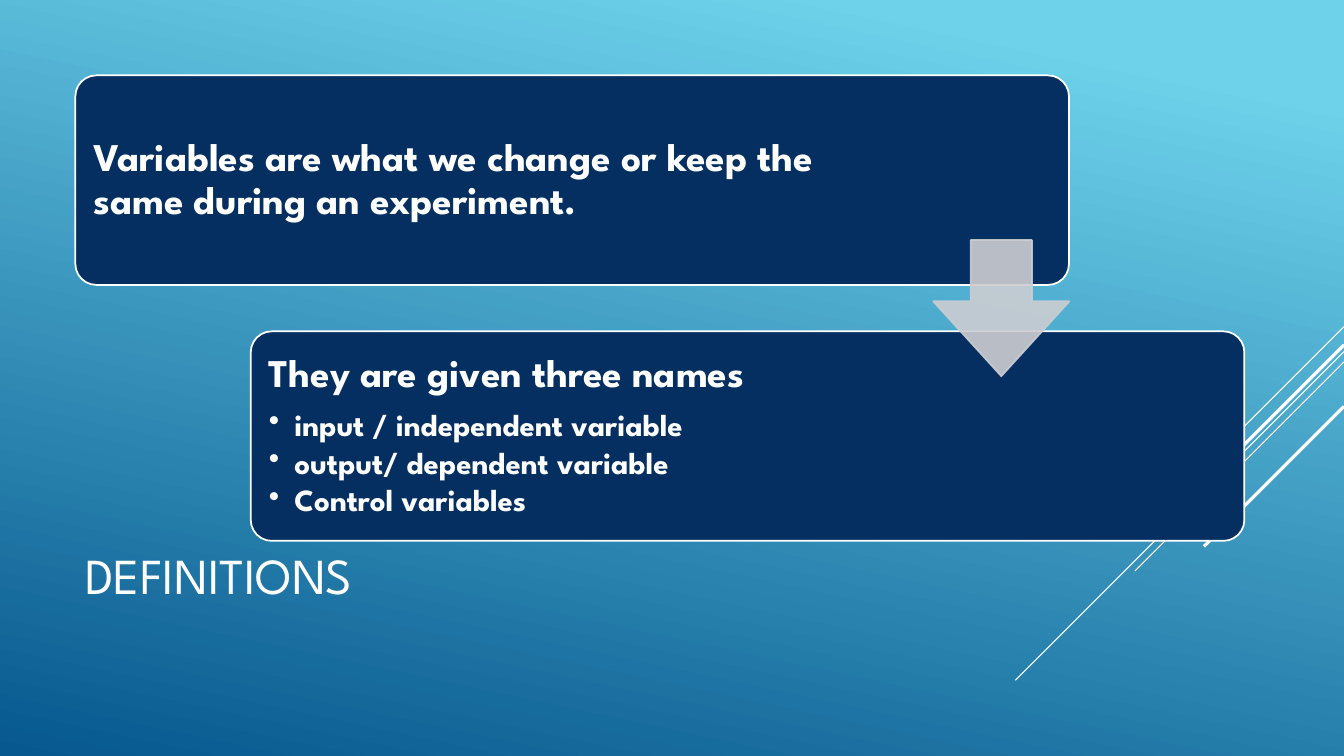
from dataclasses import dataclass

from pptx import Presentation
from pptx.dml.color import RGBColor
from pptx.enum.shapes import MSO_CONNECTOR, MSO_SHAPE
from pptx.enum.text import MSO_ANCHOR
from pptx.oxml.ns import qn
from pptx.util import Cm, Pt
from lxml import etree

STRAIGHT = MSO_CONNECTOR.STRAIGHT
ROUNDED = MSO_SHAPE.ROUNDED_RECTANGLE
DOWN_ARROW = MSO_SHAPE.DOWN_ARROW
MIDDLE = MSO_ANCHOR.MIDDLE

FONT = "League Spartan"
WHITE, NAVY, GREY = "FFFFFF", "052F61", "CCCDD2"
SKY, OCEAN = "6ED2EB", "06588E"

SLIDE_WIDTH, SLIDE_HEIGHT = 33.87, 19.05
CARD_LEFT, CARD_TOP = 1.9, 1.9
CARD_WIDTH, CARD_HEIGHT = 25.04, 5.28
STEP_X, STEP_Y = 4.42, 6.45
CARD_PAD = 0.16
BULLET_INDENT = 0.64

TITLE = {"size": Pt(36), "bold": False}
HEADING = {"size": Pt(28), "bold": True}
BULLET = {"size": Pt(22), "bold": True}
HEADING_SPACING = {"line_spacing": 0.9, "space_after": Pt(9.8)}
BULLET_SPACING = {"line_spacing": 0.9, "space_after": Pt(3.3)}


@dataclass
class Ray:
    """A diagonal that falls leftwards from the right edge."""
    top: float
    reach: float
    weight: float


@dataclass
class Card:
    heading: str
    bullets: tuple[str, ...]
    text_width: float


RAYS = [
    Ray(8.23, 2.54, 0.75),
    Ray(8.86, 8.28, 0.75),
    Ray(9.12, 5.27, 0.75),
    Ray(8.69, 4.85, 2.25),
    Ray(10.24, 3.53, 2.25),
]
CARDS = [
    Card("Variables are what we change or keep the same during an experiment.",
         (), 19.61),
    Card("They are given three names",
         ("input / independent variable", "output/ dependent variable",
          "Control variables"), 16.89),
]


def colour(value: str) -> RGBColor:
    return RGBColor.from_string(value)


def set_all(target, values: dict) -> None:
    for name, value in values.items():
        setattr(target, name, value)


def paint_background(page) -> None:
    fill = page.background.fill
    fill.gradient()
    fill.gradient_angle = 258
    for stop, position, value in zip(fill.gradient_stops, (0.1, 1), (SKY, OCEAN)):
        stop.position = position
        stop.color.rgb = colour(value)


def add_ray(page, ray: Ray) -> None:
    line = page.shapes.add_connector(
        STRAIGHT, Cm(SLIDE_WIDTH), Cm(ray.top),
        Cm(SLIDE_WIDTH - ray.reach), Cm(ray.top + ray.reach))
    line.line.color.rgb = colour(WHITE)
    line.line.width = Pt(ray.weight)
    etree.SubElement(line._element.spPr, qn("a:effectLst"))


def add_figure(page, kind, left: float, top: float, width: float, height: float,
               fill: str, outline: str, adjustments: tuple[float, ...]):
    shape = page.shapes.add_shape(kind, Cm(left), Cm(top), Cm(width), Cm(height))
    shape.shadow.inherit = False
    shape.fill.solid()
    shape.fill.fore_color.rgb = colour(fill)
    shape.line.color.rgb = colour(outline)
    shape.line.width = Pt(1.25)
    for index, value in enumerate(adjustments):
        shape.adjustments[index] = value
    return shape


def add_box(page, left: float, top: float, width: float, height: float,
            inset_x: float, inset_y: float):
    box = page.shapes.add_textbox(Cm(left), Cm(top), Cm(width), Cm(height))
    set_all(box.text_frame, {
        "word_wrap": True, "vertical_anchor": MIDDLE,
        "margin_left": Cm(inset_x), "margin_right": Cm(inset_x),
        "margin_top": Cm(inset_y), "margin_bottom": Cm(inset_y)})
    return box.text_frame


def write(para, text: str, style: dict, spacing: dict) -> None:
    set_all(para, spacing)
    span = para.add_run()
    span.text = text
    set_all(span.font, {"name": FONT, **style})
    span.font.color.rgb = colour(WHITE)


def add_bullet(para) -> None:
    properties = para._p.get_or_add_pPr()
    properties.set("marL", str(Cm(BULLET_INDENT)))
    properties.set("indent", str(-Cm(BULLET_INDENT)))
    etree.SubElement(properties, qn("a:buChar"), char="•")


def add_card(page, card: Card, index: int) -> None:
    left, top = CARD_LEFT + index * STEP_X, CARD_TOP + index * STEP_Y
    add_figure(page, ROUNDED, left, top, CARD_WIDTH, CARD_HEIGHT,
               NAVY, WHITE, (0.1,))
    frame = add_box(page, left + CARD_PAD, top + CARD_PAD, card.text_width,
                    CARD_HEIGHT - 2 * CARD_PAD, 0.3, 0.3)
    write(frame.paragraphs[0], card.heading, HEADING, HEADING_SPACING)
    for text in card.bullets:
        para = frame.add_paragraph()
        add_bullet(para)
        write(para, text, BULLET, BULLET_SPACING)


def add_arrow(page) -> None:
    arrow = add_figure(page, DOWN_ARROW, 23.52, 6.05, 3.43, 3.43,
                       GREY, GREY, (0.45, 0.55))
    for tint in arrow._element.spPr.iter(qn("a:srgbClr")):
        etree.SubElement(tint, qn("a:alpha"), val="90000")


def main() -> None:
    deck = Presentation()
    deck.slide_width, deck.slide_height = Cm(SLIDE_WIDTH), Cm(SLIDE_HEIGHT)
    page = deck.slides.add_slide(deck.slide_layouts[6])

    # Backdrop
    paint_background(page)
    for ray in RAYS:
        add_ray(page, ray)

    # Title
    title = add_box(page, CARD_LEFT, 12.47, 23.7, 4.19, 0.25, 0.13)
    write(title.paragraphs[0], "DEFINITIONS", TITLE, {"line_spacing": 0.9})

    # Stepped cards and the arrow between them
    for index, card in enumerate(CARDS):
        add_card(page, card, index)
    add_arrow(page)

    deck.save("out.pptx")


if __name__ == "__main__":
    main()
